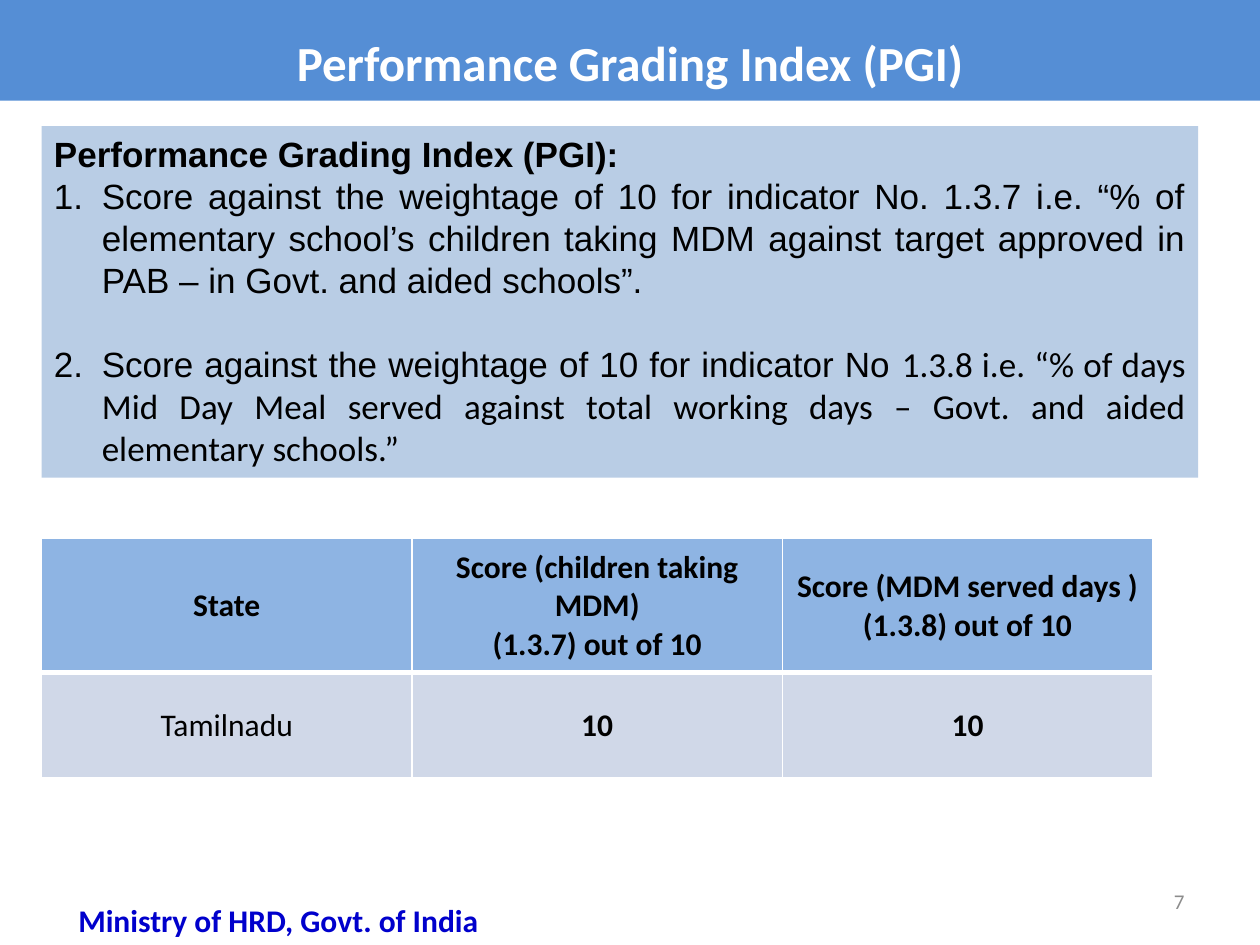
from lxml import etree
from pptx import Presentation
from pptx.dml.color import RGBColor
from pptx.enum.shapes import MSO_SHAPE
from pptx.enum.text import MSO_ANCHOR, PP_ALIGN
from pptx.oxml.ns import qn
from pptx.util import Inches, Pt

RECTANGLE = MSO_SHAPE.RECTANGLE
TOP, MIDDLE = MSO_ANCHOR.TOP, MSO_ANCHOR.MIDDLE
CENTER, RIGHT, JUSTIFY = PP_ALIGN.CENTER, PP_ALIGN.RIGHT, PP_ALIGN.JUSTIFY

THEME = {
    "heading_font": "Arial", "font": "Calibri",
    "title_size": 28, "body_size": 20, "table_size": 18, "number_size": 12,
    "band": "558ED5", "panel": "B9CDE5", "header": "8EB4E3", "row": "D0D8E8",
    "white": "FFFFFF", "black": "000000", "footer": "0000CC", "number": "8C8C8C",
}

TITLE = "Performance Grading Index (PGI)"
PANEL_HEADING = "Performance Grading Index (PGI):"
# Each indicator is a list of (text, font) spans.
INDICATORS = [
    [("Score against the weightage of 10 for indicator No. 1.3.7 i.e. “% of elementary "
      "school’s children taking MDM against target approved in PAB – in Govt. and aided "
      "schools”.", THEME["heading_font"])],
    [("Score against the weightage of 10 for indicator No ", THEME["heading_font"]),
     ("1.3.8 i.e. “% of days Mid Day Meal served against total working days – Govt. and "
      "aided elementary schools.”", THEME["font"])],
]
SCORES = [
    [["State"],
     ["Score (children taking MDM)", "(1.3.7) out of 10"],
     ["Score (MDM served days )", "(1.3.8) out of 10"]],
    [["Tamilnadu"], ["10"], ["10"]],
]
ROW_HEIGHTS = [1.07, 0.83]
COLUMN_WIDTH = 2.94
FOOTER = "Ministry of HRD, Govt. of India"
PAGE_NUMBER = "7"
MARGIN = 0.33


def color(name):
    return RGBColor.from_string(THEME[name])


def add_span(para, text, size, ink="black", font=THEME["font"], bold=False):
    span = para.add_run()
    span.text = text
    span.font.size = Pt(size)
    span.font.name = font
    span.font.bold = bold
    span.font.color.rgb = color(ink)


def next_para(frame, align):
    """Return the frame's first paragraph while it is empty, otherwise a new one."""
    para = frame.paragraphs[0]
    if para.runs:
        para = frame.add_paragraph()
    para.alignment = align
    return para


def add_box(page, left, top, width, height, fill=None, anchor=TOP):
    place = [Inches(length) for length in (left, top, width, height)]
    if fill:
        box = page.shapes.add_shape(RECTANGLE, *place)
        box.shadow.inherit = False
        box.fill.solid()
        box.fill.fore_color.rgb = color(fill)
        box.line.fill.background()
    else:
        box = page.shapes.add_textbox(*place)
    box.text_frame.word_wrap = True
    box.text_frame.vertical_anchor = anchor
    return box.text_frame


def number_para(para):
    properties = para._p.get_or_add_pPr()
    properties.set("marL", str(Inches(0.38)))
    properties.set("indent", str(Inches(-0.38)))
    font = etree.SubElement(properties, qn("a:buFont"))
    font.set("typeface", THEME["heading_font"])
    etree.SubElement(properties, qn("a:buAutoNum")).set("type", "arabicPeriod")


def set_borders(cell, widths):
    """Draw white left, right, top and bottom borders of the given point widths."""
    properties = cell._tc.get_or_add_tcPr()
    for index, (side, width) in enumerate(zip("LRTB", widths)):
        line = etree.Element(qn(f"a:ln{side}"), w=str(Pt(width)))
        fill = etree.SubElement(line, qn("a:solidFill"))
        etree.SubElement(fill, qn("a:srgbClr")).set("val", THEME["white"])
        properties.insert(index, line)


def add_panel(page):
    frame = add_box(page, MARGIN, 1, 9.18, 2.79, fill="panel")
    add_span(next_para(frame, JUSTIFY), PANEL_HEADING, THEME["body_size"],
             font=THEME["heading_font"], bold=True)
    for index, spans in enumerate(INDICATORS):
        para = next_para(frame, JUSTIFY)
        if index:
            para.space_before = Pt(24)
        number_para(para)
        for text, font in spans:
            add_span(para, text, THEME["body_size"], font=font)


def add_score_table(page):
    columns = len(SCORES[0])
    table = page.shapes.add_table(
        len(SCORES), columns, Inches(MARGIN), Inches(4.27),
        Inches(COLUMN_WIDTH * columns), Inches(sum(ROW_HEIGHTS))).table
    for column in table.columns:
        column.width = Inches(COLUMN_WIDTH)
    for r, row in enumerate(SCORES):
        table.rows[r].height = Inches(ROW_HEIGHTS[r])
        header = r == 0
        for c, lines in enumerate(row):
            cell = table.cell(r, c)
            cell.fill.solid()
            cell.fill.fore_color.rgb = color("header" if header else "row")
            set_borders(cell, (1, 1, 1, 3) if header else (1, 1, 3, 1))
            cell.vertical_anchor = MIDDLE
            cell.margin_left = cell.margin_right = cell.margin_top = Inches(0.01)
            cell.margin_bottom = 0
            for line in lines:
                add_span(next_para(cell.text_frame, CENTER), line,
                         THEME["table_size"], bold=header or c > 0)


def main():
    deck = Presentation()
    deck.slide_width, deck.slide_height = Inches(10), Inches(7.5)
    page = deck.slides.add_slide(deck.slide_layouts[6])

    title = next_para(add_box(page, 0, 0, 10, 0.8, fill="band", anchor=MIDDLE), CENTER)
    title.line_spacing = 1.4
    add_span(title, TITLE, THEME["title_size"], ink="white", bold=True)

    add_score_table(page)
    add_panel(page)

    number = next_para(add_box(page, 7.17, 6.95, 2.33, 0.4, anchor=MIDDLE), RIGHT)
    add_span(number, PAGE_NUMBER, THEME["number_size"], ink="number")
    footer = next_para(add_box(page, 0.25, 7.1, 3.92, 0.4), CENTER)
    add_span(footer, FOOTER, THEME["table_size"], ink="footer", bold=True)

    deck.save("out.pptx")


if __name__ == "__main__":
    main()
